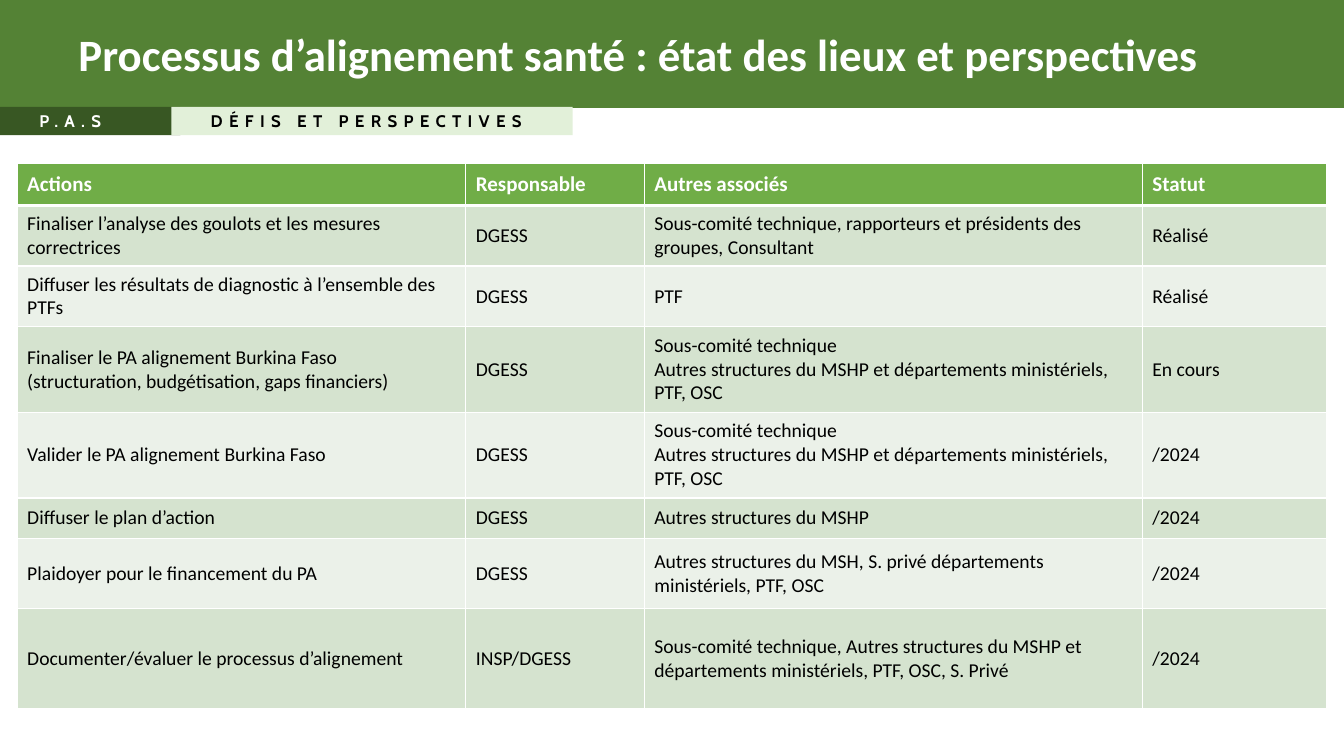
from lxml.etree import SubElement
from pptx import Presentation
from pptx.dml.color import RGBColor
from pptx.enum.shapes import MSO_SHAPE
from pptx.enum.text import MSO_ANCHOR, MSO_AUTO_SIZE, PP_ALIGN
from pptx.oxml import parse_xml
from pptx.oxml.ns import nsdecls, qn
from pptx.util import Inches, Pt

TITLE = "Processus d’alignement santé : état des lieux et perspectives"
TABS = [
    ("P.A.S", 0, 1.79, "dark", "white"),
    ("DÉFIS ET PERSPECTIVES", 1.7, 3.98, "pale", "black"),
]
HEAD = ("Actions", "Responsable", "Autres associés", "Statut")
GROUPS = "Sous-comité technique\nAutres structures du MSHP et départements ministériels, PTF, OSC"
ROWS = [
    ("Finaliser l’analyse des goulots et les mesures correctrices", "DGESS",
     "Sous-comité technique, rapporteurs et présidents des groupes, Consultant", "Réalisé"),
    ("Diffuser les résultats de diagnostic à l’ensemble des PTFs", "DGESS", "PTF", "Réalisé"),
    ("Finaliser le PA alignement Burkina Faso (structuration, budgétisation, gaps financiers)",
     "DGESS", GROUPS, "En cours"),
    ("Valider le PA alignement Burkina Faso", "DGESS", GROUPS, "/2024"),
    ("Diffuser le plan d’action", "DGESS", "Autres structures du MSHP", "/2024"),
    ("Plaidoyer pour le financement du PA", "DGESS",
     "Autres structures du MSH, S. privé départements ministériels, PTF, OSC", "/2024"),
    ("Documenter/évaluer le processus d’alignement", "INSP/DGESS",
     "Sous-comité technique, Autres structures du MSHP et départements ministériels, "
     "PTF, OSC, S. Privé", "/2024"),
]
WIDTHS = (4.45, 1.77, 4.94, 1.83)
HEIGHTS = (0.42, 0.6, 0.6, 0.85, 0.85, 0.4, 0.7, 0.99)
COLORS = {
    "banner": "548235", "dark": "385723", "pale": "E2F0D9", "head": "70AD47",
    "odd": "D5E3CF", "even": "EBF1E9", "white": "FFFFFF", "black": "000000",
}


def color(name):
    return RGBColor.from_string(COLORS[name])


def style(frame, size, ink, bold, face="Calibri", align=PP_ALIGN.LEFT):
    for para in frame.paragraphs:
        para.alignment = align
        for run in para.runs:
            font = run.font
            font.name, font.size, font.bold = face, Pt(size), bold
            font.color.rgb = color(ink)


def bar(slide, left, top, width, height, fill):
    box = slide.shapes.add_shape(
        MSO_SHAPE.RECTANGLE, Inches(left), Inches(top), Inches(width), Inches(height))
    box.shadow.inherit = False
    box.fill.solid()
    box.fill.fore_color.rgb = color(fill)
    box.line.fill.background()
    return box


def add_tab(slide, text, left, width, fill, ink):
    frame = bar(slide, left, 1.06, width, 0.28, fill).text_frame
    frame.text = text
    frame.word_wrap = False
    frame.auto_size = MSO_AUTO_SIZE.SHAPE_TO_FIT_TEXT
    frame.vertical_anchor = MSO_ANCHOR.TOP
    frame.margin_left = frame.margin_right = Inches(0.39)
    frame.margin_top = frame.margin_bottom = Inches(0.04)
    style(frame, 12, ink, True, "Cabin")
    for run in frame.paragraphs[0].runs:
        run.font._element.set("spc", "450")


def border(cell, base):
    props = cell._tc.get_or_add_tcPr()
    for spot, side in enumerate("LRTB"):
        width = Pt(base if side == "B" else 1)
        line = parse_xml(f'<a:ln{side} {nsdecls("a")} w="{width}"/>')
        fill = SubElement(line, qn("a:solidFill"))
        SubElement(fill, qn("a:srgbClr")).set("val", COLORS["white"])
        props.insert(spot, line)


def add_grid(slide):
    data = [HEAD] + ROWS
    grid = slide.shapes.add_table(
        len(data), len(HEAD), Inches(0.17), Inches(1.62),
        Inches(sum(WIDTHS)), Inches(sum(HEIGHTS))).table
    for col, width in zip(grid.columns, WIDTHS):
        col.width = Inches(width)
    for row, height in zip(grid.rows, HEIGHTS):
        row.height = Inches(height)
    for r, texts in enumerate(data):
        top = r == 0
        fill = "head" if top else "odd" if r % 2 else "even"
        for c, text in enumerate(texts):
            cell = grid.cell(r, c)
            cell.text_frame.text = text
            cell.vertical_anchor = MSO_ANCHOR.MIDDLE
            cell.fill.solid()
            cell.fill.fore_color.rgb = color(fill)
            style(cell.text_frame, 15 if top else 14, "white" if top else "black", top)
            border(cell, 3 if top else 1)


def main():
    deck = Presentation()
    deck.slide_width, deck.slide_height = Inches(13.33), Inches(7.5)
    slide = deck.slides.add_slide(deck.slide_layouts[6])
    bar(slide, 0, 0, 13.33, 1.07, "banner")
    title = slide.shapes.add_textbox(Inches(0.68), 0, Inches(12.28), Inches(1.07))
    frame = title.text_frame
    frame.text = TITLE
    frame.word_wrap = True
    frame.vertical_anchor = MSO_ANCHOR.MIDDLE
    style(frame, 32, "white", True, align=PP_ALIGN.JUSTIFY)
    for tab in TABS:
        add_tab(slide, *tab)
    add_grid(slide)
    deck.save("out.pptx")


if __name__ == "__main__":
    main()
